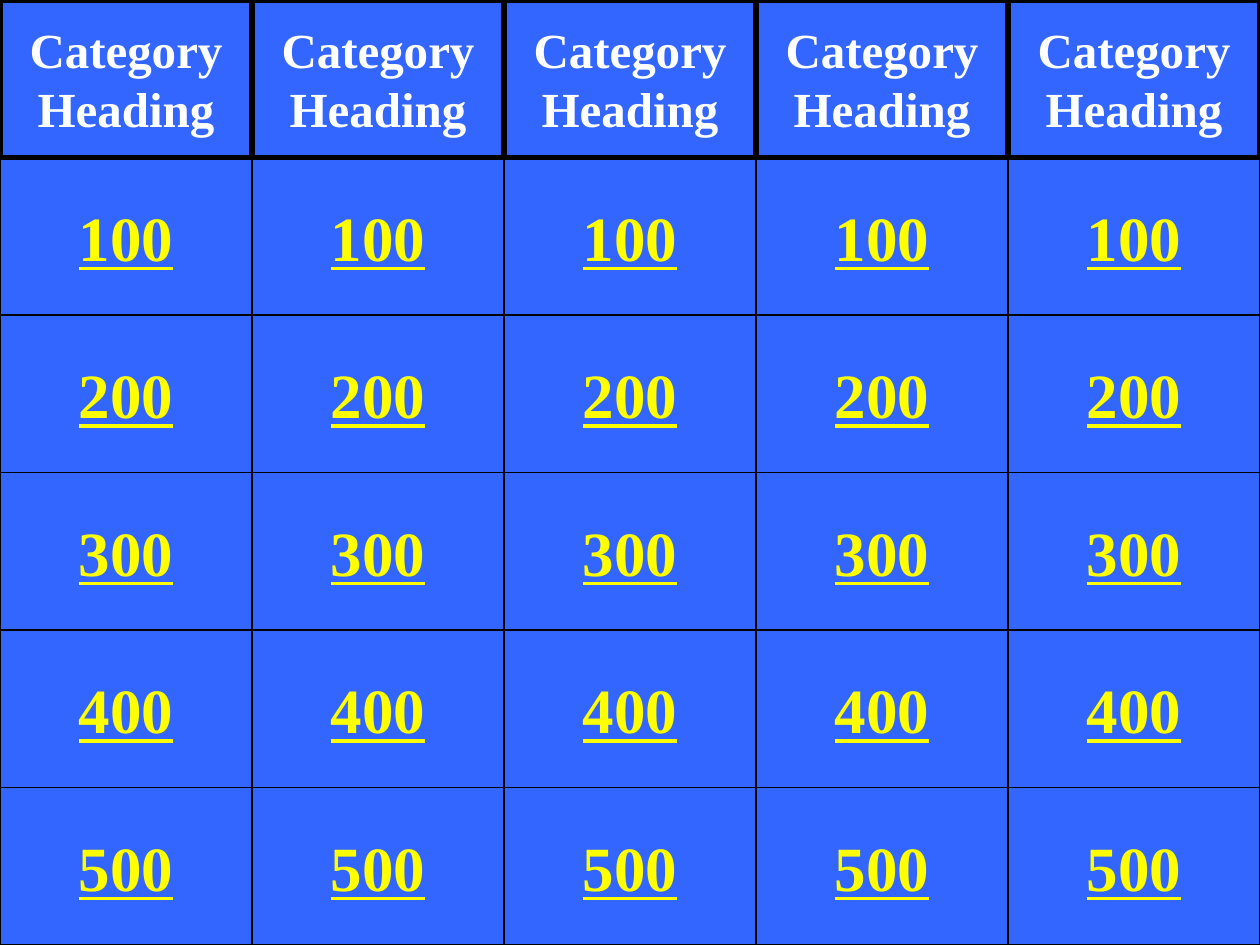
from pptx import Presentation
from pptx import util as u
from pptx.dml import color
from pptx.enum import shapes, text

COLORS = {"board": "3366FF", "border": "000000", "heading": "FFFFFF", "points": "FFFF00"}
FONT = "Times New Roman"
HEADINGS = ["Category\nHeading"] * 5
POINTS = [100, 200, 300, 400, 500]


def rgb(name):
    return color.RGBColor.from_string(COLORS[name])


def add_cell(slide, preset, box, label, size, text_color, border, underline=False):
    shape = slide.shapes.add_shape(preset, *box)
    shape.shadow.inherit = False
    shape.fill.solid()
    shape.fill.fore_color.rgb = rgb("board")
    shape.line.color.rgb = rgb("border")
    shape.line.width = u.Pt(border)

    frame = shape.text_frame
    frame.word_wrap = False
    frame.vertical_anchor = text.MSO_ANCHOR.MIDDLE
    frame.text = label
    for paragraph in frame.paragraphs:
        paragraph.alignment = text.PP_ALIGN.CENTER
        for run in paragraph.runs:
            run.font.name = FONT
            run.font.size = u.Pt(size)
            run.font.bold = True
            run.font.underline = underline
            run.font.color.rgb = rgb(text_color)


def add_point_buttons(slide, left, top, width, height):
    """Fill the box with one column per category and one row per point value."""
    column_width = width // len(HEADINGS)
    row_height = height // len(POINTS)
    for column in range(len(HEADINGS)):
        for row, points in enumerate(POINTS):
            box = (left + column * column_width, top + row * row_height,
                   column_width, row_height)
            add_cell(slide, shapes.MSO_SHAPE.ACTION_BUTTON_CUSTOM, box, str(points),
                     36, "points", 0.75, underline=True)


def add_headings(slide, left, top, width, height):
    column_width = width // len(HEADINGS)
    for column, heading in enumerate(HEADINGS):
        box = (left + column * column_width, top, column_width, height)
        add_cell(slide, shapes.MSO_SHAPE.RECTANGLE, box, heading, 28, "heading", 3)


def main():
    presentation = Presentation()
    presentation.slide_width = u.Inches(10)
    presentation.slide_height = u.Inches(7.5)
    slide = presentation.slides.add_slide(presentation.slide_layouts[6])
    slide.background.fill.solid()
    slide.background.fill.fore_color.rgb = rgb("board")

    add_point_buttons(slide, u.Inches(0), u.Inches(1.25), u.Inches(10), u.Inches(6.25))
    add_headings(slide, u.Inches(0), u.Inches(0), u.Inches(10), u.Inches(1.25))
    presentation.save("out.pptx")


if __name__ == "__main__":
    main()
